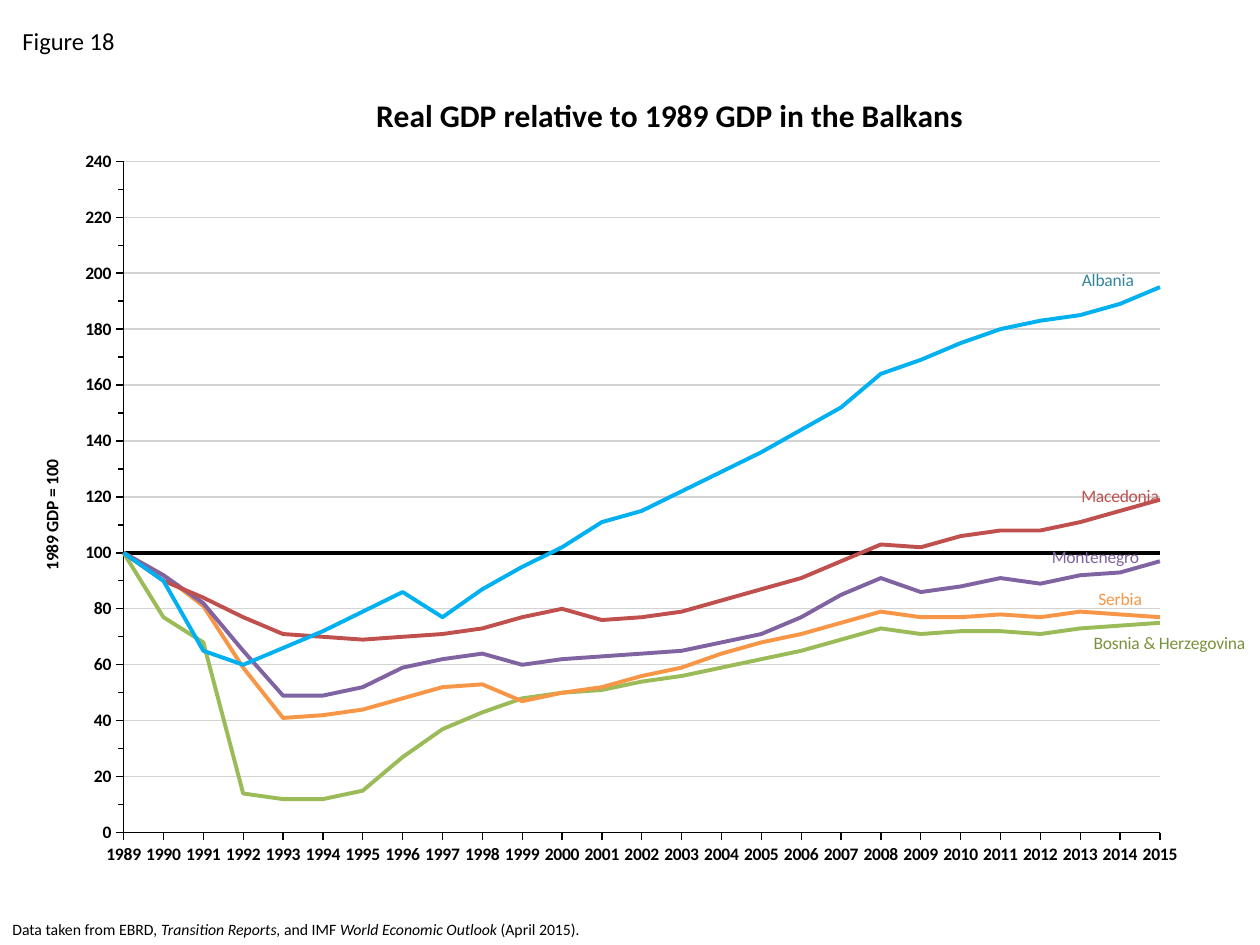
"""Build a slide with a line chart of Balkan GDP relative to 1989."""
from lxml import etree
from pptx import Presentation
from pptx.chart.data import CategoryChartData
from pptx.dml.color import RGBColor
from pptx.enum.chart import XL_CHART_TYPE as CT, XL_LABEL_POSITION as POS, XL_TICK_MARK as TICK
from pptx.oxml.ns import qn
from pptx.util import Inches, Pt


def style(font, size, color="000000", bold=False):
    font.name, font.size, font.bold = "Calibri", Pt(size), bold
    font.color.rgb = RGBColor.from_string(color)


def place(parent, index, **shares):
    for old in parent.findall(qn("c:layout")):
        parent.remove(old)
    layout = etree.Element(qn("c:layout"))
    manual = etree.SubElement(layout, qn("c:manualLayout"))
    for tag, value in shares.items():
        etree.SubElement(manual, qn("c:" + tag)).set("val", str(value))
    parent.insert(index, layout)


SERIES = [
    ("Base", "000000", [100] * 27, None),
    ("Bosnia & Herzegovina", "9BBB59",
     [100, 77, 68, 14, 12, 12, 15, 27, 37, 43, 48, 50, 51, 54, 56, 59, 62, 65, 69, 73, 71, 72, 72, 71, 73, 74, 75],
     ("77933C", 0.04, 0.04)),
    ("Serbia", "F79646",
     [100, 92, 81, 59, 41, 42, 44, 48, 52, 53, 47, 50, 52, 56, 59, 64, 68, 71, 75, 79, 77, 77, 78, 77, 79, 78, 77],
     ("F79646", 0, 0)),
    ("Montenegro", "8064A2",
     [100, 92, 82, 65, 49, 49, 52, 59, 62, 64, 60, 62, 63, 64, 65, 68, 71, 77, 85, 91, 86, 88, 91, 89, 92, 93, 97],
     ("8064A2", -0.02, 0)),
    ("Macedonia", "C0504D",
     [100, 90, 84, 77, 71, 70, 69, 70, 71, 73, 77, 80, 76, 77, 79, 83, 87, 91, 97, 103, 102, 106, 108, 108, 111, 115, 119],
     ("C0504D", 0, 0)),
    ("Albania", "00B0F0",
     [100, 90, 65, 60, 66, 72, 79, 86, 77, 87, 95, 102, 111, 115, 122, 129, 136, 144, 152, 164, 169, 175, 180, 183, 185, 189, 195],
     ("31859C", -0.01, -0.01)),
]
NOTE = [("Data taken from EBRD", False), (", Transition Reports, ", True), ("and IMF ", False),
        ("World Economic Outlook ", True), ("(April 2015)", False), (".", True)]

prs = Presentation()
prs.slide_width, prs.slide_height = Inches(10), Inches(7.5)
s = prs.slides.add_slide(prs.slide_layouts[6])

for box, size, runs in [((0, 7.25, 10, 0.25), 9, NOTE),
                        ((0.08, 0.16, 1.33, 0.34), 14, [("Figure 18", False)])]:
    tf = s.shapes.add_textbox(*map(Inches, box)).text_frame
    tf.word_wrap = True
    p = tf.paragraphs[0]
    style(p.font, size)
    for text, italic in runs:
        r = p.add_run()
        r.text, r.font.italic = text, italic

data = CategoryChartData(number_format="0")
data.categories = [str(year) for year in range(1989, 2016)]
for name, color, values, label in SERIES:
    data.add_series(name, values)
chart = s.shapes.add_chart(CT.LINE, *map(Inches, (0.1, 0.5, 9.8, 6.5)), data).chart
style(chart.font, 10)
chart.has_legend = False
chart.plots[0].vary_by_categories = False

cat, val = chart.category_axis, chart.value_axis
val.minimum_scale, val.maximum_scale, val.major_unit, val.minor_unit = 0, 240, 20, 10
val.minor_tick_mark = TICK.OUTSIDE
val.has_major_gridlines = True
grid = val.major_gridlines.format.line
grid.width, grid.color.rgb = Pt(0.75), RGBColor.from_string("D3D3D3")
for axis in (cat, val):
    axis.major_tick_mark = TICK.OUTSIDE
    axis.format.line.width = Pt(0.75)
    axis.format.line.color.rgb = RGBColor.from_string("000000")
    style(axis.tick_labels.font, 10, bold=True)
cross = etree.Element(qn("c:crossBetween"))
cross.set("val", "midCat")
val._element.find(qn("c:majorUnit")).addprevious(cross)

for title, text, size, x, y in [
        (chart.chart_title, "Real GDP relative to 1989 GDP in the Balkans", 18, 0.29, 0.03),
        (val.axis_title, "1989 GDP = 100", 10, 0.02, 0.48)]:
    title.text_frame.text = text
    style(title.text_frame.paragraphs[0].font, size, bold=True)
    place(title._element, 1, xMode="edge", yMode="edge", x=x, y=y)
place(chart._chartSpace.chart.plotArea, 0, layoutTarget="inner", xMode="edge", yMode="edge",
      x=0.09, y=0.12, w=0.84, h=0.82)

for series, (name, color, values, label) in zip(chart.plots[0].series, SERIES):
    series.smooth = False
    series.format.line.width = Pt(2.25)
    series.format.line.color.rgb = RGBColor.from_string(color)
    if label:
        text_color, dx, dy = label
        dl = series.points[25].data_label
        dl.text_frame.text = name
        style(dl.text_frame.paragraphs[0].font, 10, text_color)
        dl.position = POS.ABOVE
        series.data_labels.show_value = False
        labels = series.data_labels._element
        for lead in labels.findall(qn("c:showLeaderLines")):
            lead.set("val", "0")
        place(labels.find(qn("c:dLbl")), 1, x=dx, y=dy)

prs.save("out.pptx")
